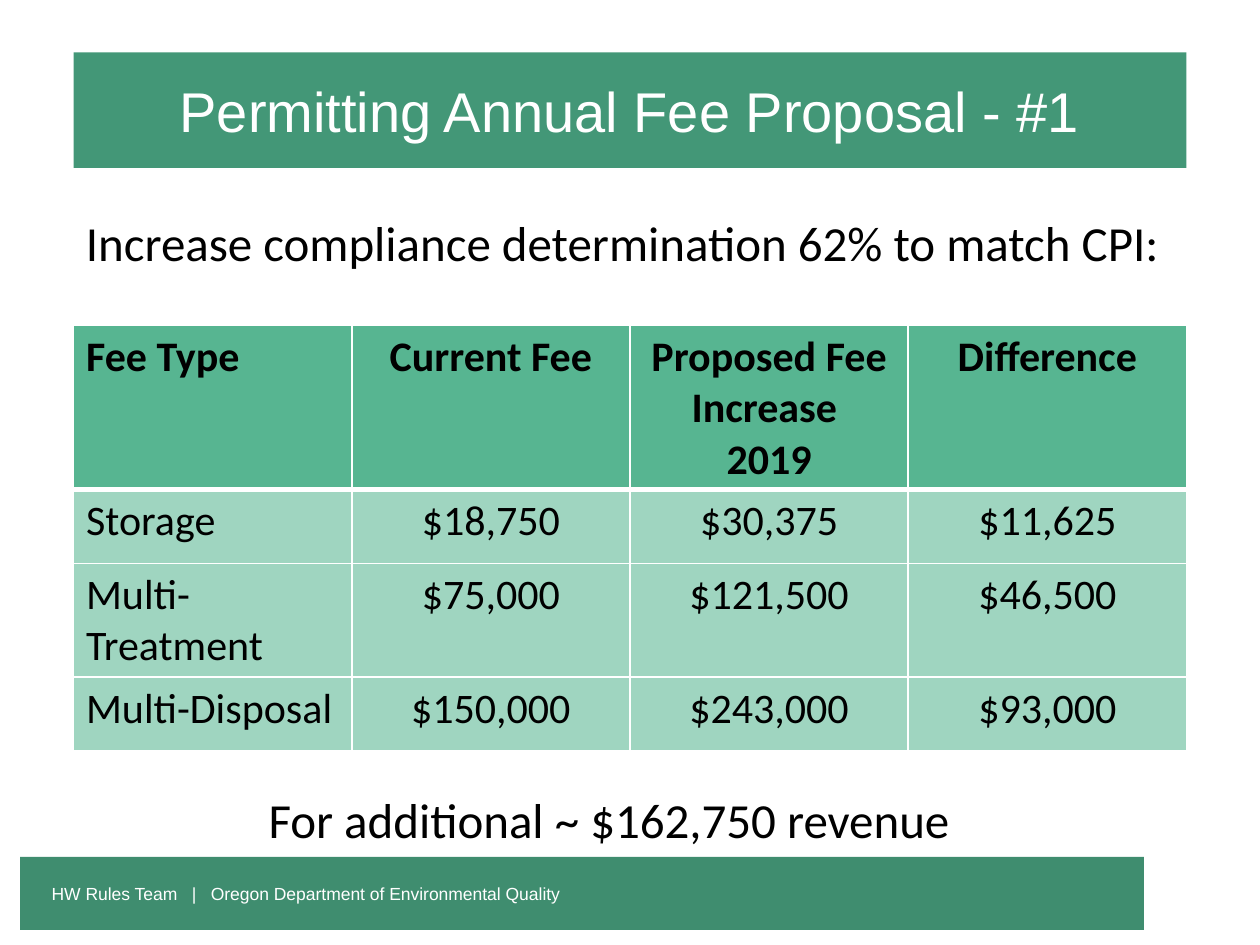
from pptx import Presentation
from pptx.dml.color import RGBColor
from pptx.enum.shapes import MSO_SHAPE
from pptx.enum.text import MSO_ANCHOR, PP_ALIGN
from pptx.oxml import parse_xml
from pptx.oxml.ns import nsdecls
from pptx.util import Pt

WHITE, BLACK = "FFFFFF", "000000"
LEFT, WIDTH = 42, 636
HEADS = ["Fee Type", "Current Fee", "Proposed Fee Increase \n2019", "Difference"]
FEES = [
    ["Storage", "$18,750", "$30,375", "$11,625"],
    ["Multi-Treatment", "$75,000", "$121,500", "$46,500"],
    ["Multi-Disposal", "$150,000", "$243,000", "$93,000"],
]
HEIGHTS = [93.4, 42.3, 64.9, 42]


def paint(item, color):
    item.fill.solid()
    item.fill.fore_color.rgb = RGBColor.from_string(color)


def style(frame, font, size, color, align=PP_ALIGN.LEFT, bold=False):
    for para in frame.paragraphs:
        para.alignment = align
        for run in para.runs:
            run.font.name = font
            run.font.size = Pt(size)
            run.font.bold = bold
            run.font.color.rgb = RGBColor.from_string(color)


def add_title(slide, text):
    title = slide.shapes.title
    title.left, title.top = Pt(LEFT), Pt(30)
    title.width, title.height = Pt(WIDTH), Pt(66)
    paint(title, "439777")
    title.text_frame.text = text
    title.text_frame.vertical_anchor = MSO_ANCHOR.MIDDLE
    style(title.text_frame, "Arial", 32, WHITE, PP_ALIGN.CENTER)


def add_text(slide, text, box, align, anchor):
    frame = slide.shapes.add_textbox(*map(Pt, box)).text_frame
    frame.word_wrap = True
    frame.vertical_anchor = anchor
    frame.text = text
    style(frame, "Calibri", 28, BLACK, align)


def add_edges(cell, low):
    props = cell._tc.get_or_add_tcPr()
    for place, (side, width) in enumerate(zip("LRTB", (1, 1, 1, low))):
        props.insert(place, parse_xml(
            f'<a:ln{side} {nsdecls("a")} w="{Pt(width)}"><a:solidFill>'
            f'<a:srgbClr val="{WHITE}"/></a:solidFill></a:ln{side}>'))


def add_fees(slide):
    rows = [HEADS] + FEES
    table = slide.shapes.add_table(
        len(rows), len(HEADS), Pt(LEFT), Pt(186), Pt(WIDTH), Pt(sum(HEIGHTS))).table
    for col in table.columns:
        col.width = Pt(WIDTH / len(HEADS))
    for r, (texts, height) in enumerate(zip(rows, HEIGHTS)):
        head = r == 0
        table.rows[r].height = Pt(height)
        for c, text in enumerate(texts):
            cell = table.cell(r, c)
            cell.text_frame.text = text
            align = PP_ALIGN.CENTER if c else PP_ALIGN.LEFT
            style(cell.text_frame, "Calibri", 24, BLACK, align, head)
            paint(cell, "57B591" if head else "9FD5C0")
            add_edges(cell, 3 if head else 1)


def add_foot(slide, team, dept):
    bar = slide.shapes.add_shape(
        MSO_SHAPE.RECTANGLE, Pt(11.5), Pt(489.6), Pt(642.2), Pt(41.8))
    bar.shadow.inherit = False
    bar.line.fill.background()
    paint(bar, "3F8D6F")
    frame = bar.text_frame
    frame.margin_left = Pt(18)
    frame.vertical_anchor = MSO_ANCHOR.MIDDLE
    para = frame.paragraphs[0]
    for text in (team, " |", " " + dept):
        para.add_run().text = text
    style(frame, "Arial", 10, WHITE)
    para.runs[1].font._element.set("spc", "556")


def main():
    deck = Presentation()
    deck.slide_width, deck.slide_height = Pt(720), Pt(540)
    slide = deck.slides.add_slide(deck.slide_layouts[5])
    add_title(slide, "Permitting Annual Fee Proposal - #1")
    add_text(slide, "Increase compliance determination 62% to match CPI:",
             (LEFT, 118, 629.5, 41), PP_ALIGN.LEFT, MSO_ANCHOR.TOP)
    add_fees(slide)
    add_foot(slide, "HW Rules Team", "Oregon Department of Environmental Quality")
    add_text(slide, "For additional ~ $162,750 revenue",
             (66, 425, 564, 63.4), PP_ALIGN.CENTER, MSO_ANCHOR.BOTTOM)
    deck.save("out.pptx")


if __name__ == "__main__":
    main()
